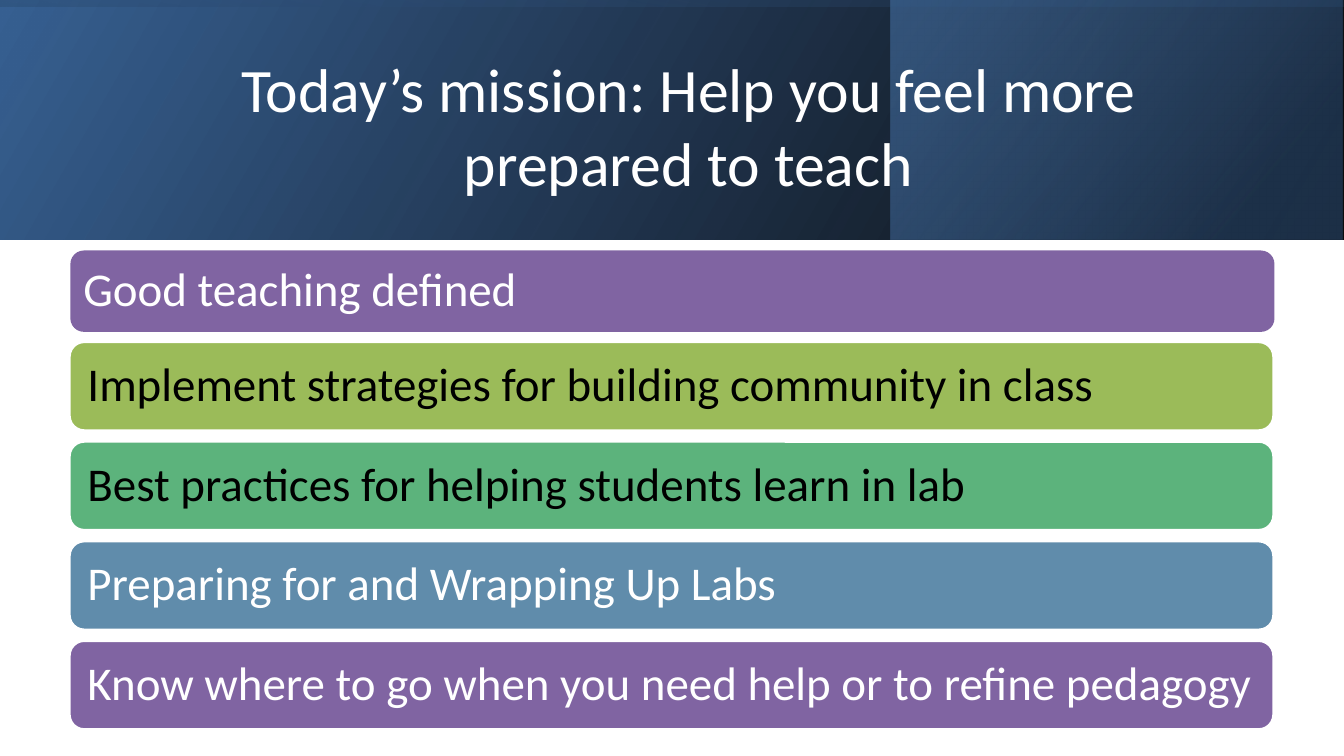
import dataclasses
import typing

import lxml.etree
import pptx
import pptx.dml.color
import pptx.enum.shapes
import pptx.enum.text
import pptx.oxml.ns
import pptx.shapes.autoshape
import pptx.slide
import pptx.text.text
import pptx.util

SCALE = 9144  # EMU in one px, 100 px to the inch
WIDTH, HEIGHT, HEAD = 1470, 827, 262
KIND = pptx.enum.shapes.MSO_SHAPE
ALIGN = pptx.enum.text.PP_ALIGN


@dataclasses.dataclass(frozen=True)
class Theme:
    font: str = "Calibri"
    title: float = 48.6
    body: float = 37
    white: str = "FFFFFF"
    black: str = "000000"
    navy: str = "254061"
    steel: str = "376092"
    blue: str = "4F81BD"
    violet: str = "8064A2"
    lime: str = "9BBB59"
    green: str = "5CB37C"
    slate: str = "608CAB"


THEME = Theme()


class Stop(typing.NamedTuple):
    place: float
    color: str
    alpha: int  # percent


@dataclasses.dataclass(frozen=True)
class Panel:
    box: tuple[int, int, int, int]
    stops: tuple[Stop, Stop]
    angle: int  # counter-clockwise
    turn: int = 0


@dataclasses.dataclass(frozen=True)
class Bar:
    text: str
    fill: str
    ink: str
    box: tuple[int, int, int, int]
    inset: int = 15
    edge: float = 2
    leading: float = 0.9


# Header layers, back to front
PANELS = (
    Panel((0, 0, WIDTH, HEAD),
          (Stop(0, THEME.black, 96), Stop(1, THEME.steel, 100)), 30),
    Panel((974, 0, 494, HEAD),
          (Stop(0.19, THEME.navy, 68), Stop(1, THEME.blue, 48)), 40),
    Panel(((WIDTH - HEAD) // 2, (HEAD - WIDTH) // 2, HEAD, WIDTH),
          (Stop(0.23, THEME.steel, 16), Stop(0.99, THEME.black, 45)), 10, 270),
)

# Agenda rows: an opening bar, then an evenly spaced list
TOP, PITCH = 374, 109
ROWS = (
    ("Implement strategies for building community in class", THEME.lime, THEME.black),
    ("Best practices for helping students learn in lab", THEME.green, THEME.black),
    ("Preparing for and Wrapping Up Labs", THEME.slate, THEME.white),
    ("Know where to go when you need help or to refine pedagogy",
     THEME.violet, THEME.white),
)
BARS = [Bar(*row, (76, TOP + i * PITCH, 1317, 97)) for i, row in enumerate(ROWS)]
BARS.append(Bar("Good teaching defined", THEME.violet, THEME.white,
                (77, 274, 1317, 89), inset=10, edge=0, leading=0.93))


def px(size: int) -> pptx.util.Emu:
    return pptx.util.Emu(size * SCALE)


def rgb(color: str) -> pptx.dml.color.RGBColor:
    return pptx.dml.color.RGBColor.from_string(color)


def apply(target: object, values: dict[str, object]) -> None:
    for name, value in values.items():
        setattr(target, name, value)


def write(frame: pptx.text.text.TextFrame, text: str, size: float, ink: str,
          side: int, rise: int, para: dict[str, object]) -> None:
    apply(frame, {
        "word_wrap": True,
        "vertical_anchor": pptx.enum.text.MSO_ANCHOR.MIDDLE,
        "margin_left": px(side), "margin_right": px(side),
        "margin_top": px(rise), "margin_bottom": px(rise),
    })
    line = frame.paragraphs[0]
    apply(line, para)
    run = line.add_run()
    run.text = text
    apply(run.font, {"name": THEME.font, "size": pptx.util.Pt(size)})
    run.font.color.rgb = rgb(ink)


def draw_panel(slide: pptx.slide.Slide, panel: Panel) -> None:
    shape = slide.shapes.add_shape(KIND.RECTANGLE, *map(px, panel.box))
    shape.shadow.inherit = False
    shape.rotation = panel.turn
    shape.line.fill.background()
    shape.fill.gradient()
    shape.fill.gradient_angle = panel.angle
    for mark, stop in zip(shape.fill.gradient_stops, panel.stops):
        mark.position = stop.place
        mark.color.rgb = rgb(stop.color)
    # Opacity and mirroring
    qn = pptx.oxml.ns.qn
    props = shape._element.spPr
    props.find(qn("a:xfrm")).set("flipH", "1")
    for node, stop in zip(props.iter(qn("a:srgbClr")), panel.stops):
        lxml.etree.SubElement(node, qn("a:alpha")).set("val", str(stop.alpha * 1000))


def draw_bar(slide: pptx.slide.Slide, bar: Bar) -> None:
    shape = slide.shapes.add_shape(KIND.ROUNDED_RECTANGLE, *map(px, bar.box))
    shape.shadow.inherit = False
    shape.fill.solid()
    shape.fill.fore_color.rgb = rgb(bar.fill)
    if bar.edge:
        shape.line.color.rgb = rgb(THEME.white)
        shape.line.width = pptx.util.Pt(bar.edge)
    else:
        shape.line.fill.background()
    write(shape.text_frame, bar.text, THEME.body, bar.ink, bar.inset, 5,
          {"alignment": ALIGN.LEFT, "line_spacing": bar.leading})


def main() -> None:
    deck = pptx.Presentation()
    apply(deck, {"slide_width": px(WIDTH), "slide_height": px(HEIGHT)})
    slide = deck.slides.add_slide(deck.slide_layouts[6])

    # Header
    for panel in PANELS:
        draw_panel(slide, panel)
    title = slide.shapes.add_textbox(*map(px, (167, 42, 1172, 190)))
    write(title.text_frame, "Today’s mission: Help you feel more prepared to teach",
          THEME.title, THEME.white, 11, 6, {"alignment": ALIGN.CENTER})

    # Agenda
    for bar in BARS:
        draw_bar(slide, bar)
    deck.save("out.pptx")


if __name__ == "__main__":
    main()
